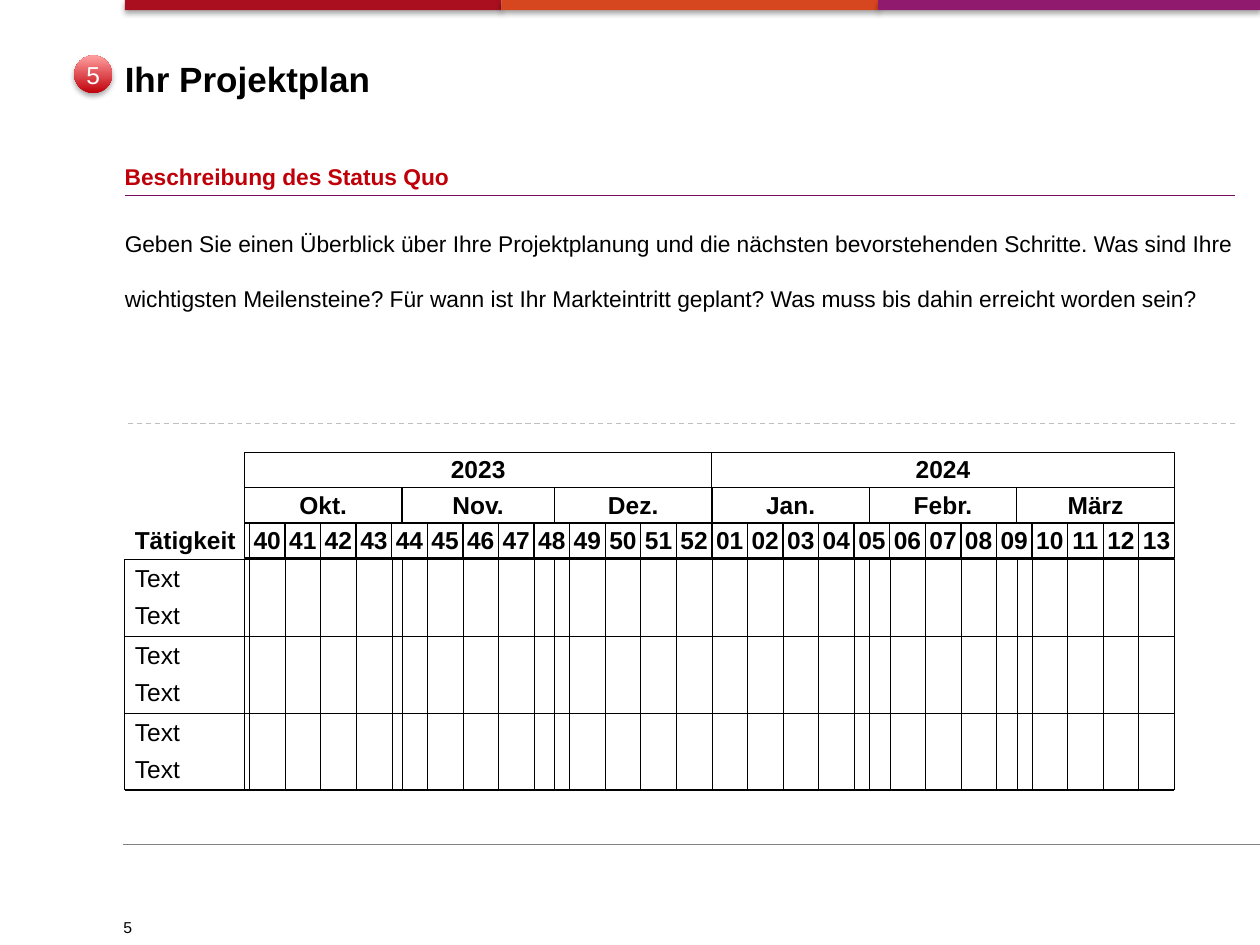
from lxml import etree
from pptx import Presentation
from pptx.dml.color import RGBColor
from pptx.enum.dml import MSO_LINE
from pptx.enum.shapes import MSO_CONNECTOR, MSO_SHAPE
from pptx.enum.text import MSO_ANCHOR, PP_ALIGN
from pptx.oxml import parse_xml
from pptx.oxml.ns import nsdecls, qn
from pptx.util import Inches, Pt

RECT, OVAL = MSO_SHAPE.RECTANGLE, MSO_SHAPE.OVAL
STRAIGHT = MSO_CONNECTOR.STRAIGHT
DASH, DOT = MSO_LINE.DASH, MSO_LINE.ROUND_DOT
TOP, MID, LOW = MSO_ANCHOR.TOP, MSO_ANCHOR.MIDDLE, MSO_ANCHOR.BOTTOM
LEFT, MIDDLE = PP_ALIGN.LEFT, PP_ALIGN.CENTER

HUES = {
    "black": "000000", "white": "FFFFFF", "red": "C00009", "pink": "FFA0A0",
    "wine": "AA0F1F", "orange": "D7471F", "purple": "901B6E",
    "plum": "740B5C", "grey": "808080", "pale": "BFBFBF",
}
HUES = {name: RGBColor.from_string(code) for name, code in HUES.items()}

SHADOW = (
    f'<a:effectLst {nsdecls("a")}><a:outerShdw blurRad="40000" dist="23000" '
    'dir="5400000" rotWithShape="0"><a:srgbClr val="000000">'
    '<a:alpha val="35000"/></a:srgbClr></a:outerShdw></a:effectLst>'
)

deck = Presentation()
deck.slide_width, deck.slide_height = Inches(10), Inches(7.5)
slide = deck.slides.add_slide(deck.slide_layouts[6])
shapes = slide.shapes


def write(shape, text, size, hue="black", bold=False, align=LEFT,
          anchor=TOP, space=None, wrap=False, pad=0):
    frame = shape.text_frame
    frame.margin_left = frame.margin_right = 0
    frame.margin_top = frame.margin_bottom = Inches(pad)
    frame.word_wrap = wrap
    frame.vertical_anchor = anchor
    para = frame.paragraphs[0]
    para.text = text
    para.alignment = align
    para.line_spacing = space
    font = para.font
    font.name, font.size, font.bold = "Arial", Pt(size), bold
    font.color.rgb = HUES[hue]


def rule(x1, y1, x2, y2, width=0.75, hue="black", dash=None):
    line = shapes.add_connector(
        STRAIGHT, Inches(x1), Inches(y1), Inches(x2), Inches(y2))
    line.line.color.rgb = HUES[hue]
    line.line.width = Pt(width)
    if dash:
        line.line.dash_style = dash
    etree.SubElement(line._element.spPr, qn("a:effectLst"))


edge, right = 0.99, 9.8

number = shapes.add_textbox(Inches(0.98), Inches(7.27), Inches(1.34), Inches(0.19))
write(number, "5", 9, space=Pt(11.8))

for x, width, hue in [(edge, 2.99, "wine"), (3.98, 2.99, "orange"), (6.97, 3.03, "purple")]:
    bar = shapes.add_shape(RECT, Inches(x), 0, Inches(width), Inches(0.08))
    bar.fill.solid()
    bar.fill.fore_color.rgb = HUES[hue]
    bar.line.fill.background()
    bar._element.spPr.append(parse_xml(SHADOW))

rule(0.98, 6.7, 10, 6.7, 0.5, "grey")

title = shapes.add_textbox(Inches(edge), Inches(0.4), Inches(8.81), Inches(0.96))
write(title, "Ihr Projektplan", 20, bold=True, space=Pt(28), wrap=True)

badge = shapes.add_shape(OVAL, Inches(0.59), Inches(0.44), Inches(0.3), Inches(0.3))
badge.fill.gradient()
badge.fill.gradient_angle = 90
for stop, hue, place in zip(badge.fill.gradient_stops, ["red", "pink"], [0, 1]):
    stop.color.rgb = HUES[hue]
    stop.position = place
badge.line.fill.background()
badge._element.spPr.append(parse_xml(SHADOW))
write(badge, "5", 14, "white", align=MIDDLE, anchor=MID)

left, first, end = 1.94, 1.98, 9.32
top, high = 3.59, 0.28
step = (end - first) / 26
weeks = [first + step * i for i in range(27)]
months = [left, 3.19, 4.4, 5.65, 6.9, 8.07, end]
labels = [f"{n:02}" for n in [*range(40, 53), *range(1, 14)]]
rows = [
    ([left, 5.65, end], ["2023", "2024"]),
    (months, ["Okt.", "Nov.", "Dez.", "Jan.", "Febr.", "März"]),
    ([left] + weeks, [""] + labels),
]
for row, (stops, names) in enumerate(rows):
    for x, after, name in zip(stops, stops[1:], names):
        cell = shapes.add_shape(RECT, Inches(x), Inches(top + high * row),
                                Inches(after - x), Inches(high))
        cell.shadow.inherit = False
        cell.fill.background()
        cell.line.color.rgb = HUES["black"]
        cell.line.width = Pt(0.75)
        if name:
            write(cell, name, 14, bold=True, align=MIDDLE, anchor=MID,
                  space=0.99, pad=0.03)

head, gap = 4.44, 0.61
foot = head + 3 * gap
for x in [edge] + months:
    rule(x, head, x, foot, 0.75 if x in (edge, left, end) else 0.25)
for i, x in enumerate(weeks[:-1]):
    if i != 13:
        rule(x, head, x, foot, 0.25, dash=DOT)
for i in range(4):
    y = head + gap * i
    rule(edge, y, end, y, 0.75 if i in (0, 3) else 0.25)

task = shapes.add_textbox(Inches(1.07), Inches(4.18), Inches(0.86), Inches(0.23))
write(task, "Tätigkeit", 14, bold=True, anchor=LOW, space=0.99)
for i in range(3):
    for drop in (0.04, 0.33):
        item = shapes.add_textbox(Inches(1.07), Inches(head + gap * i + drop),
                                  Inches(0.38), Inches(0.23))
        write(item, "Text", 14, space=0.99)

topic = shapes.add_textbox(Inches(edge), Inches(1.29), Inches(3.7), Inches(0.24))
write(topic, "Beschreibung des Status Quo", 13, "red", bold=True, wrap=True)
rule(edge, 1.55, right, 1.55, hue="plum")

body = shapes.add_textbox(Inches(edge), Inches(1.61), Inches(8.81), Inches(1.24))
write(body, "Geben Sie einen Überblick über Ihre Projektplanung und die nächsten "
      "bevorstehenden Schritte. Was sind Ihre wichtigsten Meilensteine? Für wann "
      "ist Ihr Markteintritt geplant? Was muss bis dahin erreicht worden sein?",
      13, space=2.0, wrap=True)
rule(right, 3.36, edge, 3.36, hue="pale", dash=DASH)

deck.save("out.pptx")
